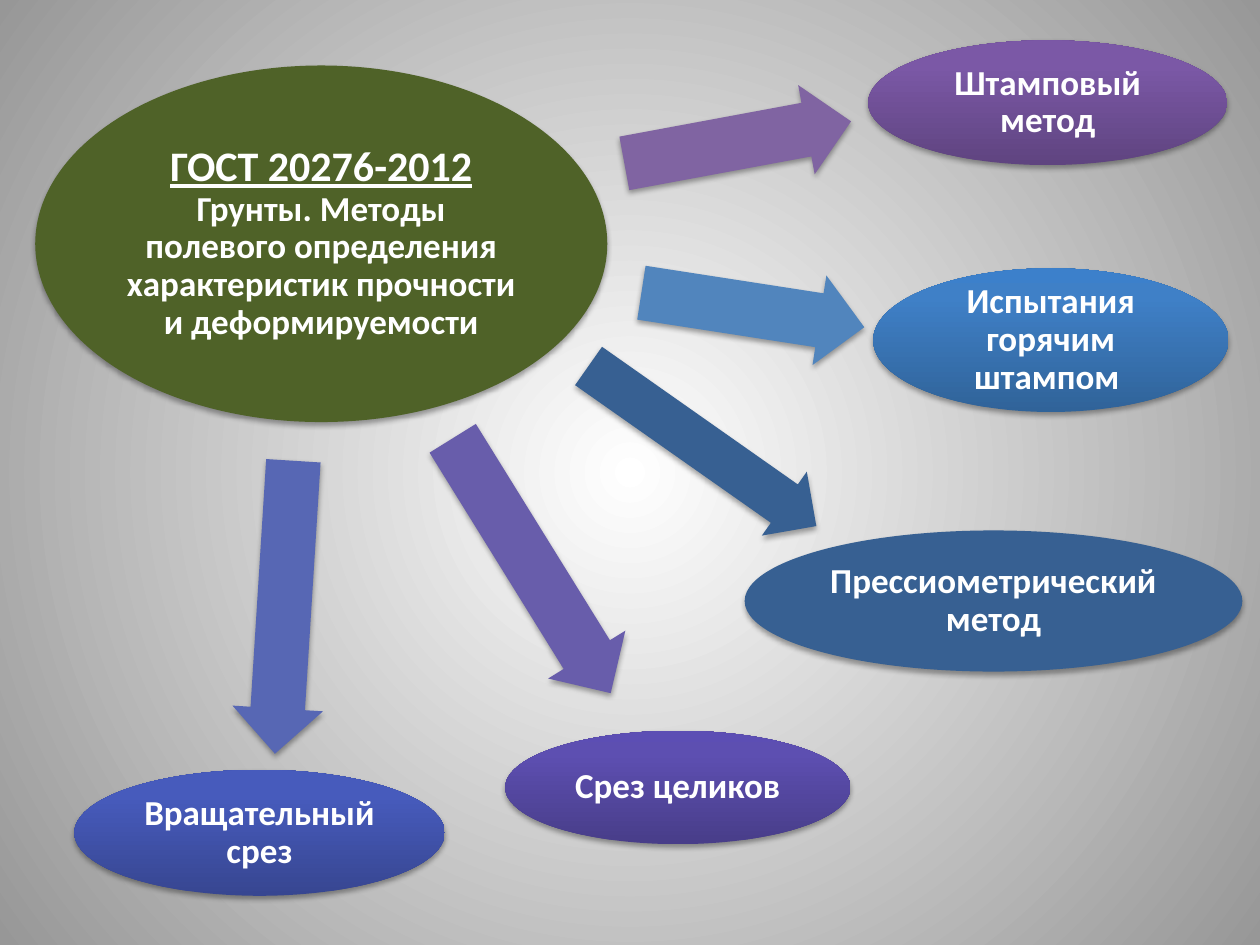
"""Slide of field soil test methods that branch out from one standard."""
from lxml.etree import SubElement as Sub
from pptx import Presentation
from pptx.dml.color import RGBColor as RGB
from pptx.enum.shapes import MSO_SHAPE as Form
from pptx.enum.text import MSO_ANCHOR as Anchor, PP_ALIGN as Align
from pptx.oxml.ns import qn
from pptx.util import Inches, Pt

WHITE = RGB(0xFF, 0xFF, 0xFF)
BLACK = RGB(0x00, 0x00, 0x00)
GREY = RGB(0x97, 0x97, 0x97)
GREEN = RGB(0x4F, 0x62, 0x28)
PLUM = RGB(0x80, 0x64, 0xA2)
GRAPE = RGB(0x68, 0x5D, 0xAB)
INDIGO = RGB(0x57, 0x67, 0xB4)
BLUE = RGB(0x51, 0x85, 0xBD)
NAVY = RGB(0x37, 0x60, 0x92)
PLUMS = RGB(0x5F, 0x44, 0x80), RGB(0x7B, 0x58, 0xA6), RGB(0x7C, 0x57, 0xA8)
GRAPES = RGB(0x48, 0x3D, 0x89), RGB(0x5D, 0x4F, 0xB1), RGB(0x5C, 0x4E, 0xB4)
INDIGOS = RGB(0x37, 0x46, 0x91), RGB(0x47, 0x5B, 0xBC), RGB(0x45, 0x5A, 0xBF)
BLUES = RGB(0x30, 0x63, 0x99), RGB(0x3F, 0x80, 0xC7), RGB(0x3C, 0x80, 0xCB)

deck = Presentation()
deck.slide_width, deck.slide_height = Inches(10), Inches(7.5)
col, row = deck.slide_width / 100, deck.slide_height / 75
slide = deck.slides.add_slide(deck.slide_layouts[6])


def blend(fill, root, stops):
    """Fill with a gradient of (percent, colour) stops and return its node."""
    fill.gradient()
    grad = next(root.iter(qn("a:gradFill")))
    for node in list(grad):
        grad.remove(node)
    chain = Sub(grad, qn("a:gsLst"))
    for share, tint in stops:
        stop = Sub(chain, qn("a:gs"), pos=str(share * 1000))
        Sub(stop, qn("a:srgbClr"), val=str(tint))
    return grad


def draw(form, box, paint):
    """Add a shadowed shape at a grid box in one colour or three."""
    left, top, wide, high = box
    shape = slide.shapes.add_shape(
        form, int(left * col), int(top * row), int(wide * col), int(high * row))
    if isinstance(paint, RGB):
        shape.fill.solid()
        shape.fill.fore_color.rgb = paint
    else:
        grad = blend(shape.fill, shape.element, zip((0, 80, 100), paint))
        Sub(grad, qn("a:lin"), ang="16200000", scaled="0")
    shape.line.fill.background()
    shape.shadow.inherit = False
    effects = next(shape.element.iter(qn("a:effectLst")))
    shade = Sub(effects, qn("a:outerShdw"), blurRad=str(Pt(3.1)),
                dist=str(Pt(1.8)), dir="5400000", rotWithShape="0")
    tint = Sub(shade, qn("a:srgbClr"), val=str(BLACK))
    Sub(tint, qn("a:alpha"), val="35000")
    return shape


back = blend(slide.background.fill, slide.element, [(0, WHITE), (100, GREY)])
way = Sub(back, qn("a:path"), path="circle")
Sub(way, qn("a:fillToRect"), l="50000", t="50000", r="50000", b="50000")

arrows = [
    ((49.4, 7.7, 18.3, 7.2), 349.5, PLUM),
    ((30.3, 41.3, 23.8, 7.2), 58.2, GRAPE),
    ((10.9, 44.6, 23.3, 7.2), 93.6, INDIGO),
    ((50.8, 21, 17.9, 7.2), 8.8, BLUE),
    ((44.7, 32.3, 22.1, 6.2), 35.1, NAVY),
]
for box, turn, paint in arrows:
    arrow = draw(Form.RIGHT_ARROW, box, paint)
    arrow.rotation = turn
    arrow.adjustments[0], arrow.adjustments[1] = 0.6, 0.5

ovals = [
    ((2.8, 5.2, 45.4, 28.3), GREEN, [
        ("ГОСТ 20276-2012 ", 24, True),
        ("Грунты. Методы полевого определения характеристик прочности "
         "и деформируемости", 20, False)]),
    ((68.9, 3.2, 28.5, 9.9), PLUMS, [("Штамповый метод", 20, False)]),
    ((40.1, 58, 27.4, 9), GRAPES, [("Срез целиков", 20, False)]),
    ((5.9, 61.1, 29.4, 10), INDIGOS, [("Вращательный срез", 20, False)]),
    ((69.3, 21.3, 28.2, 11.4), BLUES, [("Испытания горячим штампом ", 20, False)]),
    ((59.1, 42.1, 39.5, 11.2), NAVY, [("Прессиометрический метод", 20, False)]),
]
for box, paint, parts in ovals:
    frame = draw(Form.OVAL, box, paint).text_frame
    look = {"word_wrap": True, "vertical_anchor": Anchor.MIDDLE}
    for side in ("left", "right", "top", "bottom"):
        look["margin_" + side] = Inches(0.03)
    for name, value in look.items():
        setattr(frame, name, value)
    line = frame.paragraphs[0]
    line.alignment, line.line_spacing = Align.CENTER, 0.9
    for text, size, under in parts:
        run = line.add_run()
        run.text = text
        style = {"name": "Calibri", "size": Pt(size), "bold": True, "underline": under}
        for name, value in style.items():
            setattr(run.font, name, value)
        run.font.color.rgb = WHITE

deck.save("out.pptx")
